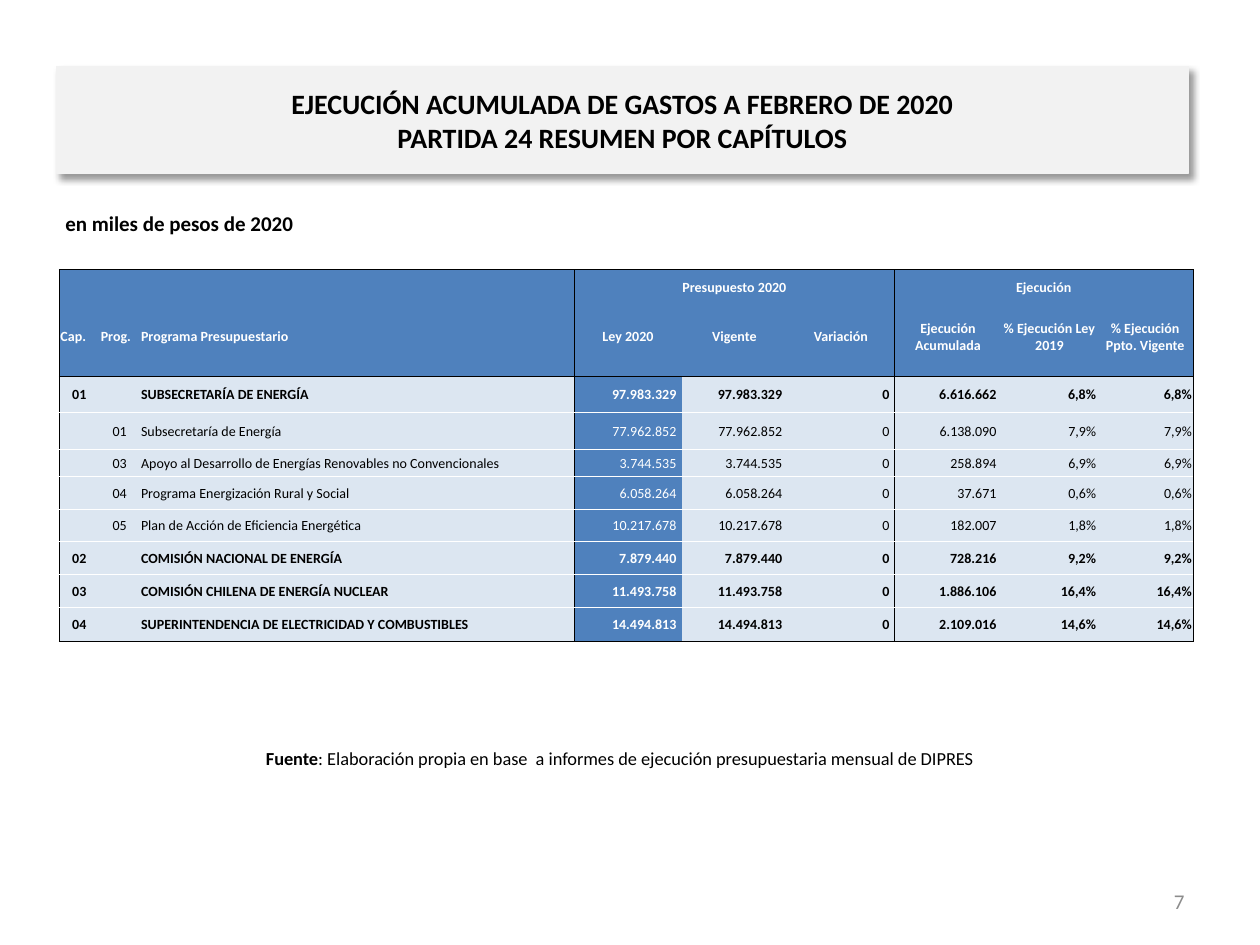
from lxml import etree
from pptx import Presentation
from pptx.dml.color import RGBColor
from pptx.enum.shapes import MSO_SHAPE
from pptx.enum.text import MSO_ANCHOR, PP_ALIGN
from pptx.oxml.ns import qn
from pptx.util import Inches, Pt

LEFT, CENTER, RIGHT = PP_ALIGN.LEFT, PP_ALIGN.CENTER, PP_ALIGN.RIGHT
JUSTIFY = PP_ALIGN.JUSTIFY
TOP, MIDDLE, BOTTOM = MSO_ANCHOR.TOP, MSO_ANCHOR.MIDDLE, MSO_ANCHOR.BOTTOM
RECTANGLE = MSO_SHAPE.RECTANGLE

BLACK = RGBColor(0x00, 0x00, 0x00)
WHITE = RGBColor(0xFF, 0xFF, 0xFF)
GRAY = RGBColor(0x8C, 0x8C, 0x8C)
PALE_GRAY = RGBColor(0xF2, 0xF2, 0xF2)
BLUE = RGBColor(0x4F, 0x81, 0xBD)
PALE_BLUE = RGBColor(0xDC, 0xE6, 0xF1)

COLUMN_WIDTHS = [0.32, 0.32, 3.45, 0.85, 0.84, 0.85, 0.85, 0.76, 0.76]
ROW_HEIGHTS = [0.21, 0.64, 0.28, 0.3, 0.21, 0.26, 0.26, 0.26, 0.26, 0.27]
GROUP_STARTS, GROUP_ENDS = (0, 3, 6), (2, 5, 8)
LAW_COLUMN = 3
BODY_ALIGNMENTS = [CENTER, CENTER, JUSTIFY] + [RIGHT] * 6

GROUP_HEADINGS = ["", "", "", "Presupuesto 2020", "", "", "Ejecución", "", ""]
COLUMN_HEADINGS = ["Cap.", "Prog.", "Programa Presupuestario", "Ley 2020",
                   "Vigente", "Variación", "Ejecución Acumulada",
                   "% Ejecución Ley 2019", "% Ejecución Ppto. Vigente"]
# chapter, programme, name, budget, executed, share executed
BUDGET_LINES = [
    ("01", "", "SUBSECRETARÍA DE ENERGÍA", "97.983.329", "6.616.662", "6,8%"),
    ("", "01", "Subsecretaría de Energía", "77.962.852", "6.138.090", "7,9%"),
    ("", "03", "Apoyo al Desarrollo de Energías Renovables no Convencionales",
     "3.744.535", "258.894", "6,9%"),
    ("", "04", "Programa Energización Rural y Social", "6.058.264", "37.671", "0,6%"),
    ("", "05", "Plan de Acción de Eficiencia Energética", "10.217.678", "182.007", "1,8%"),
    ("02", "", "COMISIÓN NACIONAL DE ENERGÍA", "7.879.440", "728.216", "9,2%"),
    ("03", "", "COMISIÓN CHILENA DE ENERGÍA NUCLEAR", "11.493.758", "1.886.106", "16,4%"),
    ("04", "", "SUPERINTENDENCIA DE ELECTRICIDAD Y COMBUSTIBLES",
     "14.494.813", "2.109.016", "14,6%"),
]


class BudgetSlide:
    font = "Calibri"
    table_size = 8

    def __init__(self, slide):
        self.slide = slide

    def style(self, paragraph, size, color=BLACK, bold=None, align=LEFT):
        paragraph.alignment = align
        font = paragraph.font
        font.name, font.size, font.bold = self.font, Pt(size), bold
        font.color.rgb = color

    def text(self, box, runs, size, color=BLACK, align=LEFT, anchor=TOP):
        """Add a text box; runs are (text, bold) pairs."""
        frame = self.slide.shapes.add_textbox(*map(Inches, box)).text_frame
        frame.word_wrap = True
        frame.vertical_anchor = anchor
        paragraph = frame.paragraphs[0]
        shared_bold = runs[0][1] if len(runs) == 1 else None
        self.style(paragraph, size, color, shared_bold, align)
        for words, bold in runs:
            run = paragraph.add_run()
            run.text = words
            if len(runs) > 1:
                run.font.bold = bold

    def banner(self, box, words, size):
        banner = self.slide.shapes.add_shape(RECTANGLE, *map(Inches, box))
        banner.fill.solid()
        banner.fill.fore_color.rgb = PALE_GRAY
        banner.line.color.rgb = PALE_GRAY
        banner.line.width = Pt(0.75)
        self.drop_shadow(banner)
        frame = banner.text_frame
        frame.word_wrap = True
        frame.vertical_anchor = MIDDLE
        frame.text = words
        self.style(frame.paragraphs[0], size, bold=True, align=CENTER)

    def drop_shadow(self, shape):
        shape.shadow.inherit = False
        effects = shape._element.spPr.find(qn("a:effectLst"))
        shadow = etree.SubElement(effects, qn("a:outerShdw"), blurRad=str(Pt(4)),
                                  dist=str(Pt(3)), dir="2700000", algn="tl",
                                  rotWithShape="0")
        color = etree.SubElement(shadow, qn("a:srgbClr"), val=str(BLACK))
        etree.SubElement(color, qn("a:alpha"), val="40000")

    def borders(self, cell, **colors):
        """Draw the sides L, R, T and B; a side whose colour is None stays bare."""
        properties = cell._tc.get_or_add_tcPr()
        for side, color in colors.items():
            line = etree.SubElement(properties, qn(f"a:ln{side}"), w=str(Pt(0.5)))
            if color is None:
                etree.SubElement(line, qn("a:noFill"))
            else:
                fill = etree.SubElement(line, qn("a:solidFill"))
                etree.SubElement(fill, qn("a:srgbClr"), val=str(color))

    def cell(self, cell, words, fill, color, bold, align, anchor, right_margin):
        cell.text = words
        cell.vertical_anchor = anchor
        cell.margin_left = cell.margin_top = Inches(0.01)
        cell.margin_right, cell.margin_bottom = Inches(right_margin), 0
        paragraph = cell.text_frame.paragraphs[0]
        self.style(paragraph, self.table_size, color, bold, align)
        if not words:
            # keeps empty cells from stretching their row
            paragraph._p.get_or_add_endParaRPr().set("sz", str(self.table_size * 100))
        cell.fill.solid()
        cell.fill.fore_color.rgb = fill

    def table(self, left, top):
        rows = [GROUP_HEADINGS, COLUMN_HEADINGS]
        for chapter, programme, name, budget, executed, share in BUDGET_LINES:
            rows.append([chapter, programme, name, budget, budget, "0",
                         executed, share, share])
        table = self.slide.shapes.add_table(
            len(rows), len(COLUMN_WIDTHS), Inches(left), Inches(top),
            Inches(sum(COLUMN_WIDTHS)), Inches(sum(ROW_HEIGHTS))).table
        table.first_row = table.horz_banding = False
        for column, width in zip(table.columns, COLUMN_WIDTHS):
            column.width = Inches(width)
        for row, height in zip(table.rows, ROW_HEIGHTS):
            row.height = Inches(height)

        last = len(rows) - 1
        for r, values in enumerate(rows):
            header = r < 2
            top_line = {0: BLACK, 1: None, 2: BLACK}.get(r, WHITE)
            bottom_line = {0: None, 1: BLACK, last: BLACK}.get(r, WHITE)
            for c, words in enumerate(values):
                cell = table.cell(r, c)
                spanned_heading = r == 0 and c >= LAW_COLUMN
                self.borders(
                    cell, L=BLACK if c in GROUP_STARTS else None,
                    R=BLACK if c in GROUP_ENDS or spanned_heading else None,
                    T=top_line, B=bottom_line)
                on_blue = header or c == LAW_COLUMN
                header_align = CENTER if c >= LAW_COLUMN else LEFT
                self.cell(
                    cell, words,
                    fill=BLUE if on_blue else PALE_BLUE,
                    color=WHITE if on_blue else BLACK,
                    bold=header or bool(values[0]),
                    align=header_align if header else BODY_ALIGNMENTS[c],
                    anchor=BOTTOM if r == 0 else MIDDLE,
                    right_margin=0.04 if not header and 3 <= c <= 6 else 0.01)
        for start, end in zip(GROUP_STARTS[1:], GROUP_ENDS[1:]):
            table.cell(0, start).merge(table.cell(0, end))


def main():
    presentation = Presentation()
    presentation.slide_width, presentation.slide_height = Inches(10), Inches(7.5)
    page = BudgetSlide(presentation.slides.add_slide(presentation.slide_layouts[6]))

    page.text((7.17, 6.95, 2.33, 0.4), [("7", False)], 12, GRAY, RIGHT, MIDDLE)
    page.text((0.45, 5.88, 8.94, 0.29),
              [("Fuente", True),
               (": Elaboración propia en base  a informes de ejecución "
                "presupuestaria mensual de DIPRES", False)], 10.5, align=CENTER)
    page.text((0.42, 1.62, 7.5, 0.37), [("en miles de pesos de 2020", True)], 12)
    page.banner((0.45, 0.53, 8.98, 0.85),
                "EJECUCIÓN ACUMULADA DE GASTOS A FEBRERO DE 2020\v"
                "PARTIDA 24 RESUMEN POR CAPÍTULOS", 16)
    page.table(0.47, 2.14)
    presentation.save("out.pptx")


if __name__ == "__main__":
    main()
